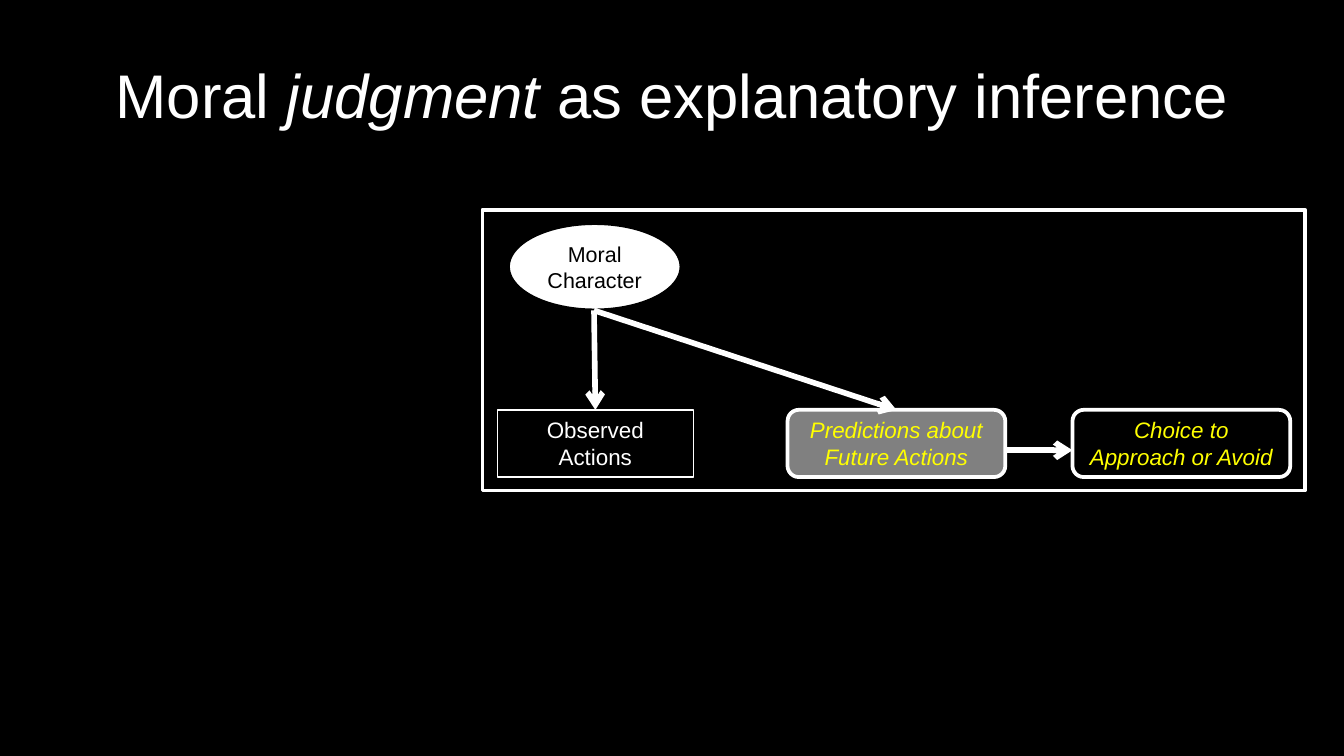
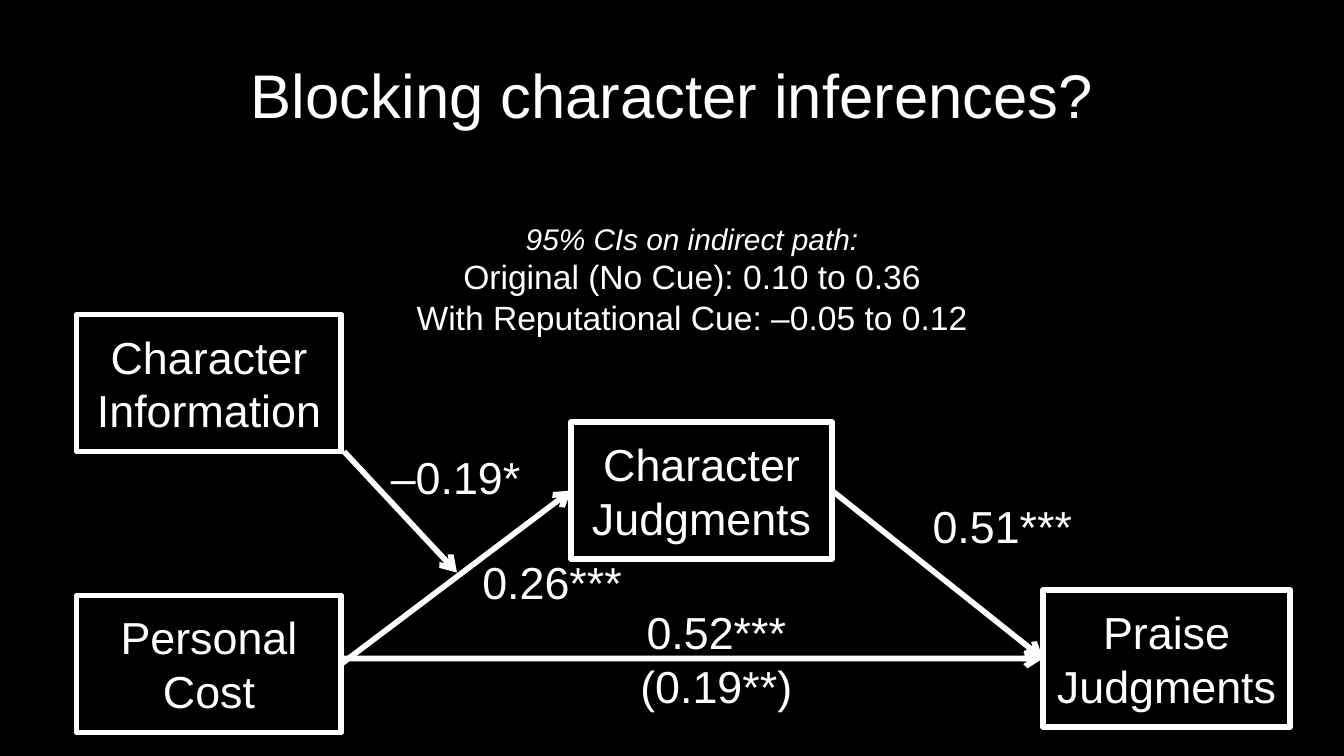
from lxml.etree import SubElement
from pptx import Presentation
from pptx.dml.color import RGBColor
from pptx.enum.shapes import MSO_CONNECTOR, MSO_SHAPE as Shape
from pptx.enum.text import MSO_ANCHOR, MSO_AUTO_SIZE as AutoSize, PP_ALIGN as Align
from pptx.oxml.ns import qn
from pptx.util import Inches, Pt

BLACK, WHITE, GRAY, YELLOW = "000000", "FFFFFF", "808080", "FFFF00"
FONT = "Arial"
TITLE_ONLY = 5
TOP, LEFT, BOTTOM, RIGHT = range(4)


def color(value):
    return RGBColor.from_string(value)


class Deck:
    def __init__(self):
        self.prs = Presentation()
        self.prs.slide_width = Inches(10)
        self.prs.slide_height = Inches(10) * 9 // 16
        background = self.prs.slide_master.background.fill
        background.solid()
        background.fore_color.rgb = color(BLACK)
        self.slide = None

    def format(self, paragraph, size, ink=WHITE, italic=False, align=Align.CENTER):
        paragraph.alignment = align
        for run in paragraph.runs:
            run.font.name = FONT
            run.font.size = Pt(size)
            run.font.italic = italic
            run.font.color.rgb = color(ink)

    def add_slide(self, title, emphasis=None):
        self.slide = self.prs.slides.add_slide(self.prs.slide_layouts[TITLE_ONLY])
        heading = self.slide.shapes.title
        heading.left, heading.top = Inches(0.5), Inches(0.23)
        heading.width, heading.height = Inches(9), Inches(0.94)
        frame = heading.text_frame
        frame.auto_size = AutoSize.NONE
        frame.vertical_anchor = MSO_ANCHOR.MIDDLE
        paragraph = frame.paragraphs[0]
        for part in title:
            paragraph.add_run().text = part
        self.format(paragraph, 33)
        for run in paragraph.runs:
            run.font.italic = run.text == emphasis

    def box(self, kind, area, text="", size=12, ink=WHITE, italic=False,
            fill=None, line=WHITE, weight=2, inset=0.1):
        shape = self.slide.shapes.add_shape(kind, *map(Inches, area))
        shape.shadow.inherit = False
        if fill:
            shape.fill.solid()
            shape.fill.fore_color.rgb = color(fill)
        else:
            shape.fill.background()
        shape.line.color.rgb = color(line)
        shape.line.width = Pt(weight)
        frame = shape.text_frame
        frame.word_wrap = True
        frame.vertical_anchor = MSO_ANCHOR.MIDDLE
        frame.margin_left = frame.margin_right = Inches(inset)
        frame.text = text
        for paragraph in frame.paragraphs:
            self.format(paragraph, size, ink, italic)
        return shape

    def label(self, area, text, size=24, align=Align.LEFT):
        textbox = self.slide.shapes.add_textbox(*map(Inches, area))
        frame = textbox.text_frame
        frame.word_wrap = False
        frame.auto_size = AutoSize.SHAPE_TO_FIT_TEXT
        frame.text = text
        for paragraph in frame.paragraphs:
            self.format(paragraph, size, align=align)
        return frame

    def arrow(self, start=(0, 0), end=(0, 0), source=None, target=None):
        connector = self.slide.shapes.add_connector(
            MSO_CONNECTOR.STRAIGHT, *map(Inches, start + end))
        if source:
            connector.begin_connect(*source)
        if target:
            connector.end_connect(*target)
        connector.line.color.rgb = color(WHITE)
        connector.line.width = Pt(3)
        properties = connector.element.spPr
        SubElement(properties.find(qn("a:ln")), qn("a:tailEnd"), type="arrow")
        SubElement(properties, qn("a:effectLst"))


def build_inference(deck):
    deck.add_slide(["Moral ", "judgment", " as explanatory inference"], "judgment")
    deck.box(Shape.RECTANGLE, (3.59, 1.56, 6.12, 2.09), fill=BLACK)
    deck.box(Shape.OVAL, (3.78, 1.66, 1.29, 0.65), "Moral Character", 11.5, BLACK,
             fill=WHITE, line=BLACK, inset=0.05)
    observed = deck.box(Shape.RECTANGLE, (3.7, 3.05, 1.46, 0.5), "Observed Actions",
                        fill=BLACK, weight=0.75)
    predictions, choice = [
        deck.box(Shape.ROUNDED_RECTANGLE, (left, 3.05, 1.62, 0.5), text,
                 ink=YELLOW, italic=True, fill=fill, inset=0.07)
        for left, text, fill in (
            (5.86, "Predictions about Future Actions", GRAY),
            (7.98, "Choice to Approach or Avoid", BLACK))]
    for outcome in (observed, predictions):
        deck.arrow(start=(4.42, 2.31), target=(outcome, TOP))
    deck.arrow((7.48, 3.35), (7.98, 3.35))


def build_mediation(deck):
    deck.add_slide(["Blocking character inferences?"])
    information, cost, character, praise = [
        deck.box(Shape.RECTANGLE, (left, top, width, 1.02), text, 24, weight=3)
        for left, top, width, text in (
            (0.57, 2.34, 1.97, "Character Information"),
            (0.57, 4.43, 1.97, "Personal\nCost"),
            (4.25, 3.14, 1.94, "Character Judgments"),
            (7.76, 4.39, 1.84, "Praise Judgments"))]
    praise.text_frame.margin_left = praise.text_frame.margin_right = Inches(0.05)
    deck.arrow(source=(cost, RIGHT), target=(character, LEFT))
    deck.arrow(source=(character, RIGHT), target=(praise, LEFT))
    deck.arrow(start=(2.54, 4.9), target=(praise, LEFT))
    deck.arrow((2.56, 3.36), (3.4, 4.26))
    for left, top, width, coefficient in (
            (3.49, 4.08, 1.25, "0.26***"),
            (6.84, 3.66, 1.25, "0.51***"),
            (2.81, 3.3, 1.18, "–0.19*")):
        deck.label((left, top, width, 0.5), coefficient)
    deck.label((4.66, 4.45, 1.34, 0.91), "0.52***\n(0.19**)", align=Align.CENTER)
    intervals = deck.label(
        (2.98, 1.59, 4.34, 0.98),
        "95% CIs on indirect path:\nOriginal (No Cue): 0.10 to 0.36\n"
        "With Reputational Cue: –0.05 to 0.12", 18, Align.CENTER)
    deck.format(intervals.paragraphs[0], 16, italic=True)


def main():
    deck = Deck()
    build_inference(deck)
    build_mediation(deck)
    deck.prs.save("out.pptx")


if __name__ == "__main__":
    main()
